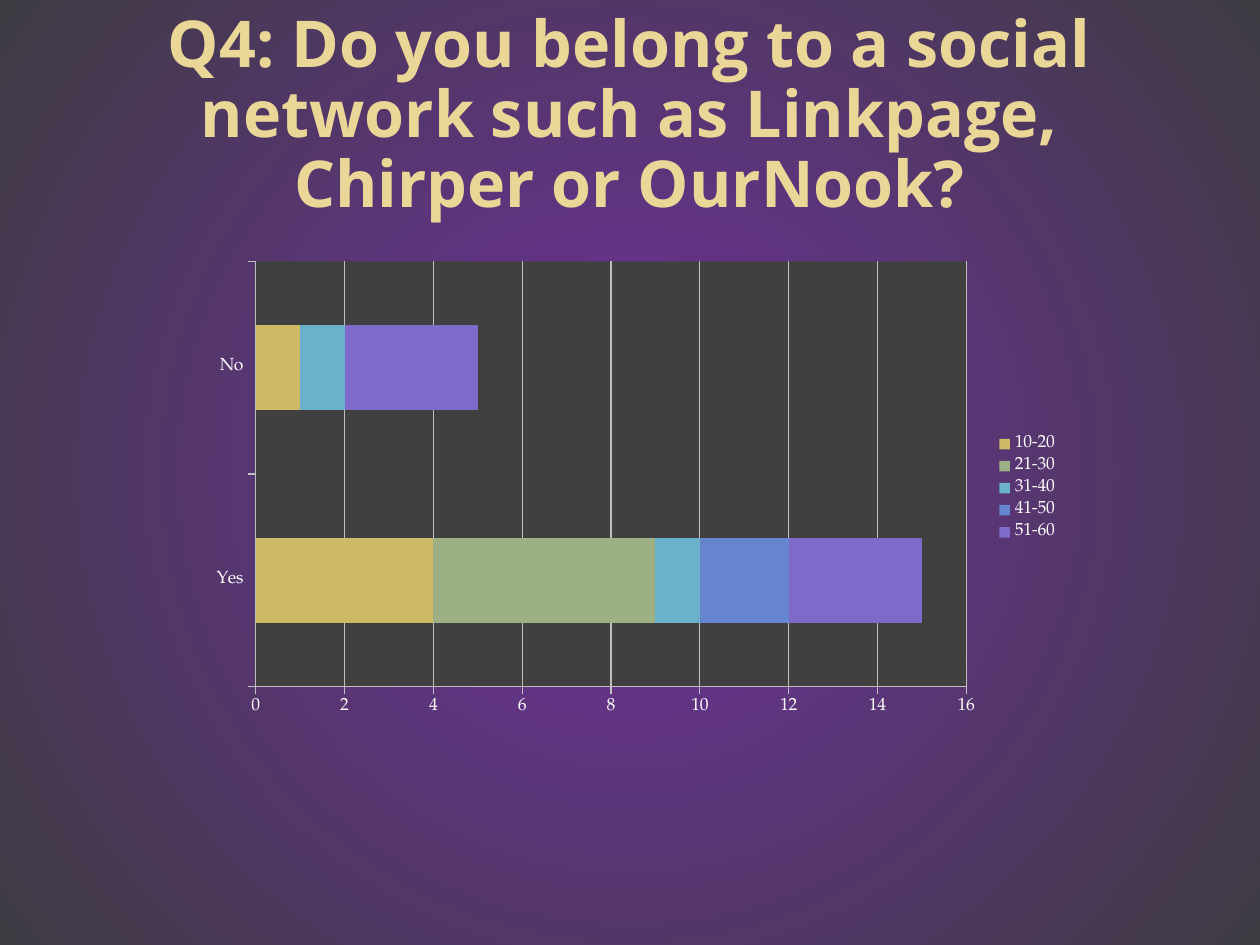
from lxml import etree
from pptx import Presentation, util as u
from pptx.chart.data import CategoryChartData
from pptx.dml.color import RGBColor
from pptx.enum import chart as c, text as t
from pptx.oxml import parse_xml
from pptx.oxml.ns import nsdecls, qn

COLORS = {
    "center": "7030A0", "edge": "3E3B42", "title": "EAD696",
    "label": "FFFFFF", "line": "BFBFBF", "plot": "404040",
    "10-20": "CEB966", "21-30": "9CB084", "31-40": "6BB1C9",
    "41-50": "6585CF", "51-60": "7E6BC9",
}
ANSWERS = {
    "10-20": (4, 1), "21-30": (5, 0), "31-40": (1, 1),
    "41-50": (2, 0), "51-60": (3, 3),
}


def color(name):
    return RGBColor.from_string(COLORS[name])


deck = Presentation()
deck.slide_width, deck.slide_height = u.Inches(10), u.Inches(7.5)
page = deck.slides.add_slide(deck.slide_layouts[6])
width, height = deck.slide_width, deck.slide_height

backdrop = page.background.fill
backdrop.gradient()
for stop, name in zip(backdrop.gradient_stops, ("center", "edge")):
    stop.color.rgb = color(name)
gradient = page.element.find(".//" + qn("a:gradFill"))
gradient.remove(gradient.find(qn("a:lin")))
circle = etree.SubElement(gradient, qn("a:path"), path="circle")
etree.SubElement(circle, qn("a:fillToRect"), l="50000", t="50000", r="50000", b="50000")

box = page.shapes.add_textbox(int(width * 0.05), int(height * 0.04),
                              int(width * 0.9), u.Inches(1.25))
frame = box.text_frame
frame.word_wrap = True
frame.vertical_anchor = t.MSO_ANCHOR.MIDDLE
para = frame.paragraphs[0]
para.text = "Q4: Do you belong to a social network such as Linkpage, Chirper or OurNook?"
para.alignment = t.PP_ALIGN.CENTER
para.line_spacing = 0.9
para.font.name, para.font.size, para.font.bold = "Open Sans", u.Pt(36.9), True
para.font.color.rgb = color("title")

data = CategoryChartData()
data.categories = ["Yes", "No"]
for age, counts in ANSWERS.items():
    data.add_series(age, counts)
chart = page.shapes.add_chart(
    c.XL_CHART_TYPE.BAR_STACKED, u.Inches(1.58), u.Inches(2),
    u.Inches(6.92), u.Inches(3.75), data).chart
chart.has_title = False
chart.font.name, chart.font.size = "TeX Gyre Pagella", u.Pt(10)
chart.font.color.rgb = color("label")
chart.has_legend = True
chart.legend.position = c.XL_LEGEND_POSITION.RIGHT
chart.legend.include_in_layout = False

plot = chart.plots[0]
plot.gap_width, plot.overlap, plot.vary_by_categories = 150, 100, False
for series in plot.series:
    series.format.fill.solid()
    series.format.fill.fore_color.rgb = color(series.name)

values = chart.value_axis
values.minimum_scale, values.maximum_scale, values.major_unit = 0, 16, 2
values.has_major_gridlines = True
chart.category_axis.has_major_gridlines = False
for axis in (chart.category_axis, values):
    axis.major_tick_mark = c.XL_TICK_MARK.OUTSIDE
    axis.minor_tick_mark = c.XL_TICK_MARK.NONE
for lines in (chart.category_axis, values, values.major_gridlines):
    lines.format.line.color.rgb = color("line")
    lines.format.line.width = u.Pt(0.75)

area = chart.element.find(".//" + qn("c:plotArea"))
for layout in area.findall(qn("c:layout")):
    area.remove(layout)
layout = etree.Element(qn("c:layout"))
manual = etree.SubElement(layout, qn("c:manualLayout"))
for tag, value in (("layoutTarget", "inner"), ("xMode", "edge"), ("yMode", "edge"),
                   ("x", "0.065"), ("y", "0.02"), ("w", "0.815"), ("h", "0.9")):
    etree.SubElement(manual, qn("c:" + tag), val=value)
area.insert(0, layout)
area.append(parse_xml(
    f'<c:spPr {nsdecls("c", "a")}><a:solidFill><a:srgbClr val="{COLORS["plot"]}"/>'
    '</a:solidFill></c:spPr>'))

deck.save("out.pptx")
